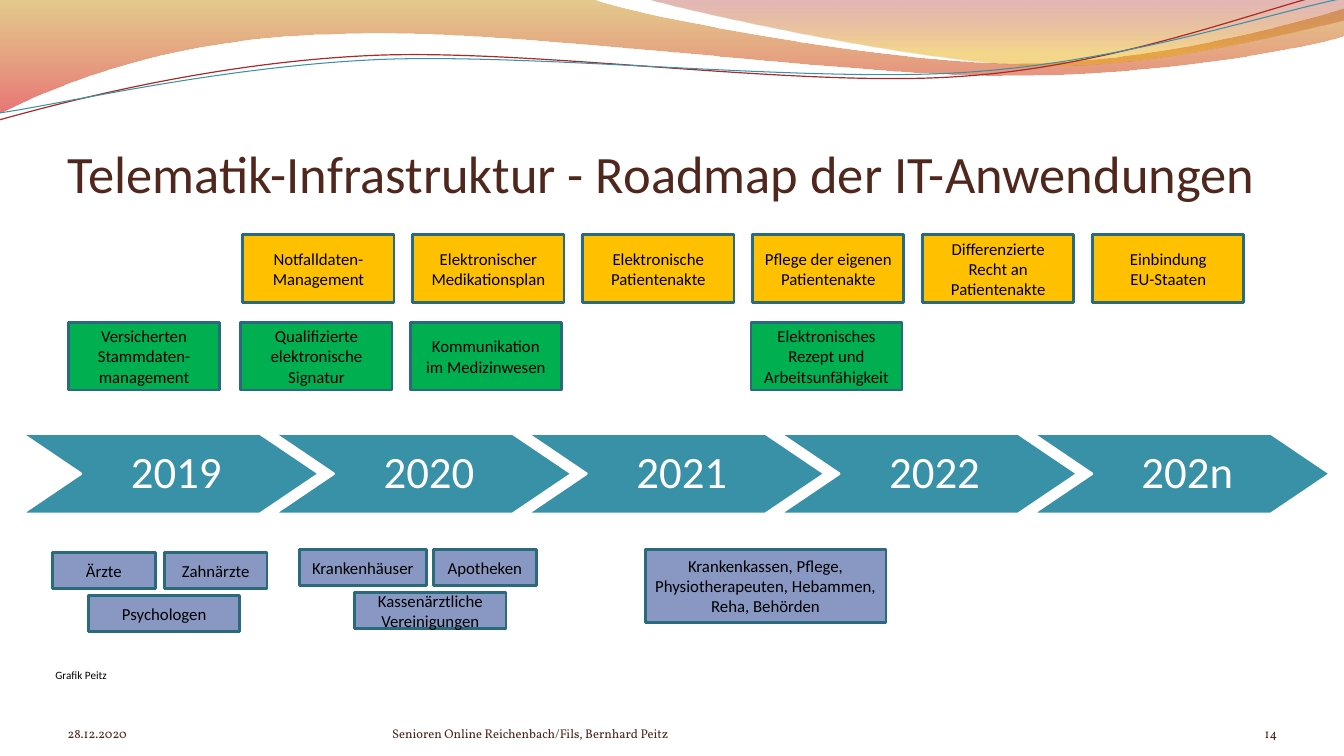
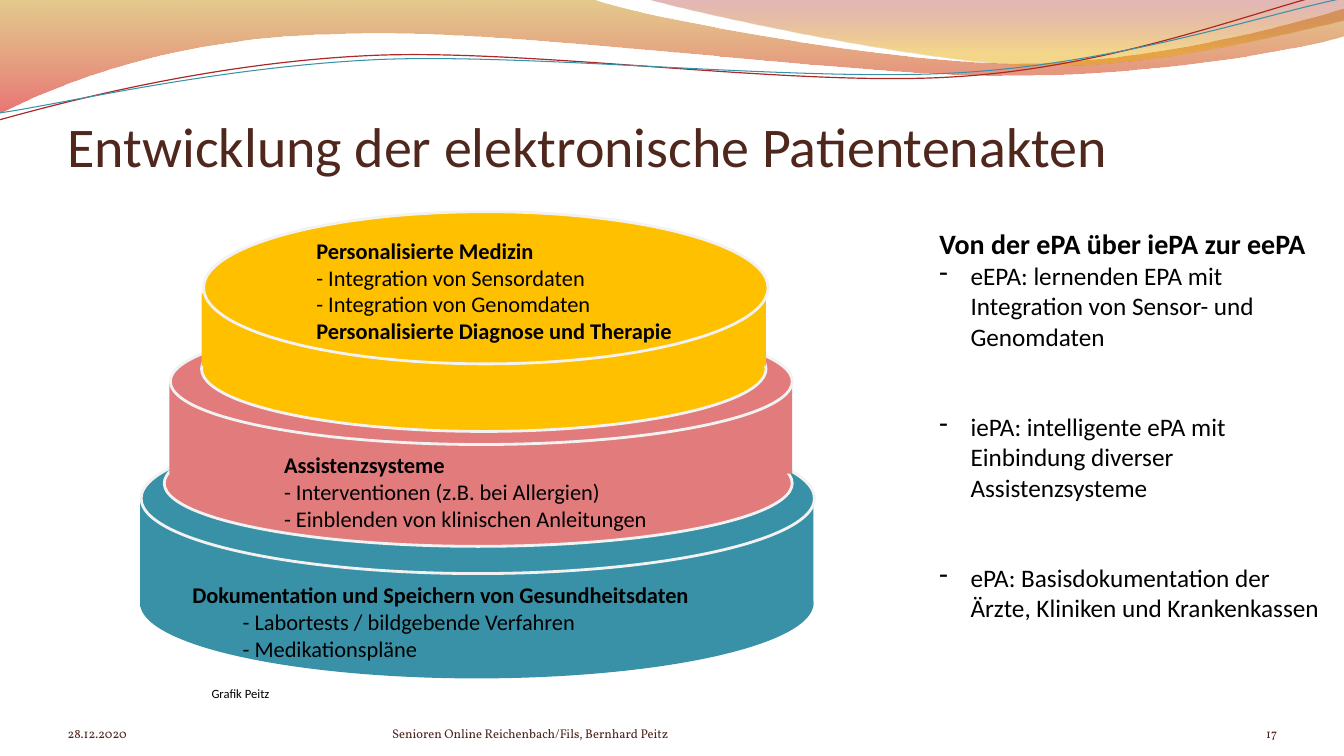
import pptx
import pptx.util
import pptx.dml.color
import pptx.enum.shapes
import pptx.enum.text
import pptx.oxml
import pptx.oxml.ns

COLORS = {
    "title": "4F271C", "footer": "4B251B", "text": "000000", "white": "FFFFFF",
    "teal": "3891A7", "border": "296B7C", "rim": "F2F2F2", "red_line": "AC2829",
    "green": "00B050", "amber": "FFC000", "lilac": "8898C3", "rose": "E17B7C",
    "ochre": "C38B00", "scarlet": "D60305", "wine": "A11112", "gold": "E9A600",
}
COLUMNS, ROWS = 40 / 3, 7.5
SHAPE = pptx.enum.shapes.MSO_SHAPE
ALIGN = pptx.enum.text.PP_ALIGN
ANCHOR = pptx.enum.text.MSO_ANCHOR
GROW = pptx.enum.text.MSO_AUTO_SIZE.SHAPE_TO_FIT_TEXT
NSDECLS = pptx.oxml.ns.nsdecls("a")

BODY = {"name": "Calibri", "size": 12, "color": "text"}
TITLE = {**BODY, "size": 40, "color": "title"}
FOOTER = {"name": "Vollkorn", "size": 9, "color": "footer"}
YEAR = {**BODY, "size": 32, "color": "white"}
TIER_TEXT = {**BODY, "size": 16}
BOLD = {"bold": True}

WAVES = [
    dict(start=(0, 0), close=True, stops=[(0, "ochre", 45), (1, "scarlet", 55)], path=[
        (5.87, -0.01), (6.34, 0.17, 8.85, 0.63, 10.11, 0.63),
        (11.38, 0.63, 12.78, 0.26, 13.33, 0.09), (13.35, 0.36),
        (13.11, 0.44, 11.6, 0.76, 9.94, 0.75), (8.29, 0.75, 5.09, 0.28, 3.43, 0.34),
        (1.72, 0.36, 0.61, 0.83, -0.01, 1.13), (0, 0)]),
    dict(start=(6.39, -0.01), close=True, stops=[(0, "wine", 30), (0.8, "gold", 45)], path=[
        (6.79, 0.11, 9.09, 0.62, 10.25, 0.65), (11.41, 0.69, 12.82, 0.32, 13.33, 0.21),
        (13.33, 0), (6.39, -0.01)]),
    dict(start=(-0.01, 1.19), line=("red_line", 0.85), path=[
        (0.64, 1.01, 2.11, 0.62, 3.69, 0.55), (5.27, 0.48, 7.9, 0.87, 9.5, 0.76),
        (11.1, 0.66, 12.52, 0.08, 13.31, -0.1)]),
    dict(start=(0, 1.12), line=("teal", 0.75), path=[
        (0.63, 1.03, 2.18, 0.66, 3.78, 0.59), (5.37, 0.53, 7.96, 0.82, 9.55, 0.72),
        (11.15, 0.62, 12.55, 0.14, 13.34, -0.02)]),
]


def grid(*cells):
    """Turn grid columns and rows into slide lengths."""
    return [pptx.util.Inches(c) for c in cells]


def rgb(name):
    """Look up a named colour."""
    return pptx.dml.color.RGBColor.from_string(COLORS[name])


def style(sp, fill=None, line=None):
    """Give a shape its fill and its (colour, points) line."""
    sp.shadow.inherit = False
    if fill:
        sp.fill.solid()
        sp.fill.fore_color.rgb = rgb(fill)
    if line:
        sp.line.color.rgb = rgb(line[0])
        sp.line.width = pptx.util.Pt(line[1])
    else:
        sp.line.fill.background()


def set_font(font, fmt):
    """Apply a dict of font values."""
    for key, value in fmt.items():
        if key == "color":
            font.color.rgb = rgb(value)
        else:
            setattr(font, key, pptx.util.Pt(value) if key == "size" else value)


def set_bullet(p, hang):
    """Give a paragraph a hanging dash in the font of its text."""
    pPr = p._p.get_or_add_pPr()
    pPr.set("marL", str(grid(hang)[0]))
    pPr.set("indent", str(-grid(hang)[0]))
    for tag in ("a:buFontTx", 'a:buChar char="-"'):
        name, _, attributes = tag.partition(" ")
        pPr.append(pptx.oxml.parse_xml("<%s %s %s/>" % (name, NSDECLS, attributes)))


def write(sp, paras, fmt, align=ALIGN.LEFT, anchor=ANCHOR.TOP,
          insets=(0.1, 0.05, 0.1, 0.05), wrap=True):
    """Fill a shape with (runs, bullet indent, space before) paragraphs."""
    tf = sp.text_frame
    tf.word_wrap = wrap
    if not wrap:
        tf.auto_size = GROW
    tf.vertical_anchor = anchor
    for side, inset in zip(("left", "top", "right", "bottom"), grid(*insets)):
        setattr(tf, "margin_" + side, inset)
    for i, (runs, hang, before) in enumerate(paras):
        p = tf.add_paragraph() if i else tf.paragraphs[0]
        p.alignment = align
        if before:
            p.space_before = pptx.util.Pt(before)
        if hang:
            set_bullet(p, hang)
        for text, changes in runs:
            for j, part in enumerate(text.split("\n")):
                if j:
                    p.add_line_break()
                if part:
                    r = p.add_run()
                    r.text = part
                    set_font(r.font, {**fmt, **changes})


def para(*runs, hang=0, before=0):
    """Describe one paragraph from texts or (text, font changes) runs."""
    return [(r, {}) if isinstance(r, str) else r for r in runs], hang, before


def add_text(s, box, paras, fmt, **frame):
    """Add a text box."""
    write(s.shapes.add_textbox(*grid(*box)), paras, fmt, **frame)


def add_shape(s, kind, box, fill, line=None):
    """Add a preset shape."""
    sp = s.shapes.add_shape(kind, *grid(*box))
    style(sp, fill, line)
    return sp


def bend(sp, path):
    """Turn the straight pieces that have control points into cubic curves."""
    pieces = list(sp.element.spPr.iter(pptx.oxml.ns.qn("a:lnTo")))
    for node, piece in zip(pieces, path):
        if len(piece) == 2:
            continue
        lengths = grid(*piece)
        points = "".join('<a:pt x="%d" y="%d"/>' % (x - sp.left, y - sp.top)
                         for x, y in zip(lengths[::2], lengths[1::2]))
        node.getparent().replace(node, pptx.oxml.parse_xml(
            "<a:cubicBezTo %s>%s</a:cubicBezTo>" % (NSDECLS, points)))


def add_wave(s, start, path, close=False, stops=(), line=None):
    """Draw one curved band or line of the header."""
    builder = s.shapes.build_freeform(*grid(*start))
    builder.add_line_segments([grid(*piece[-2:]) for piece in path], close=close)
    sp = builder.convert_to_shape()
    bend(sp, path)
    style(sp, line=line)
    if not stops:
        sp.fill.background()
        return
    sp.fill.gradient()
    sp.fill.gradient_angle = 270
    for stop, (position, color, _) in zip(sp.fill.gradient_stops, stops):
        stop.position = position
        stop.color.rgb = rgb(color)
    colors = list(sp.element.spPr.iter(pptx.oxml.ns.qn("a:srgbClr")))
    for node, (_, _, opacity) in zip(colors, stops):
        node.append(pptx.oxml.parse_xml(
            '<a:alpha %s val="%d"/>' % (NSDECLS, opacity * 1000)))


def add_slide(prs, title, title_height, title_size, number):
    """Add a slide with header waves, title and footer."""
    s = prs.slides.add_slide(prs.slide_layouts[6])
    for wave in WAVES:
        add_wave(s, **wave)
    add_text(s, (0.67, 0.77, 12, title_height), [para(title)], {**TITLE, "size": title_size},
             anchor=ANCHOR.BOTTOM, insets=(0, 0.05, 0, 0))
    for x, w, text, align in [
            (0.67, 3.11, "28.12.2020", ALIGN.LEFT),
            (3.89, 4.89, "Senioren Online Reichenbach/Fils, Bernhard Peitz", ALIGN.LEFT),
            (11.56, 1.11, number, ALIGN.RIGHT)]:
        add_text(s, (x, 6.95, w, 0.4), [para(text)], FOOTER, align=align,
                 anchor=ANCHOR.BOTTOM, insets=(0, 0, 0, 0))
    return s


def add_cards(s, x, y, fill, cards, w=1.5, h=0.67):
    """Place bordered cards at (column, row, text[, width, height]) from a corner."""
    for dx, dy, text, *size in cards:
        sp = add_shape(s, SHAPE.RECTANGLE, (x + dx, y + dy, *(size or (w, h))),
                       fill, ("border", 2))
        write(sp, [para(text)], BODY, align=ALIGN.CENTER, anchor=ANCHOR.MIDDLE)


def add_timeline(s, x, y, years, span=12.99, w=2.96, h=0.8):
    """Spread year chevrons evenly over a span."""
    pitch = (span - w) / (len(years) - 1)
    for i, year in enumerate(years):
        sp = add_shape(s, SHAPE.CHEVRON, (x + i * pitch, y, w, h), "teal", ("white", 2))
        sp.adjustments[0] = 0.74
        write(sp, [para(year)], YEAR, align=ALIGN.CENTER, anchor=ANCHOR.MIDDLE,
              insets=(0.19, 0.06, 0.07, 0.06))
        sp.text_frame.paragraphs[0].line_spacing = 0.9


def add_tier(s, x, y, fill, top, wall, base, base_line=True):
    """Stack base ellipse, wall and top ellipse into a disc."""
    rim = ("rim", 2)
    for kind, (dx, dy, w, h), line in [
            (SHAPE.OVAL, base, rim if base_line else None),
            (SHAPE.RECTANGLE, wall, None),
            (SHAPE.OVAL, top, rim)]:
        add_shape(s, kind, (x + dx, y + dy, w, h), fill, line)


def add_pyramid(s, x, y):
    """Place the three discs and their captions."""
    add_tier(s, x, y, "teal", (0.01, 2.1, 6.68, 1.49), (0, 2.84, 6.68, 1.08),
             (0, 3.14, 6.68, 1.49), base_line=False)
    add_tier(s, x, y, "rose", (0.3, 1.06, 6.17, 1.25), (0.29, 1.69, 6.18, 0.91),
             (0.24, 2.07, 6.23, 1.25))
    add_tier(s, x, y, "amber", (0.63, 0, 5.6, 1.51), (0.61, 0.81, 5.6, 0.72),
             (0.61, 0.94, 5.6, 1.24))
    for dx, dy, w, h, runs in [
            (0.42, 3.62, 5.2, 0.87, [
                ("Dokumentation und Speichern von Gesundheitsdaten\n", BOLD),
                "\t- Labortests / bildgebende Verfahren\n\t- Medikationspläne"]),
            (1.33, 2.33, 3.84, 0.87, [
                ("Assistenzsysteme\n", BOLD),
                "- Interventionen (z.B. bei Allergien)\n- Einblenden von klinischen Anleitungen"]),
            (1.65, 0.2, 3.77, 1.12, [
                ("Personalisierte Medizin\n", BOLD),
                "- Integration von Sensordaten\n- Integration von Genomdaten\n",
                ("Personalisierte Diagnose und Therapie", BOLD)])]:
        add_text(s, (x + dx, y + dy, w, h), [para(*runs)], TIER_TEXT, wrap=False)


def roadmap_slide(prs):
    """Build the roadmap of applications."""
    s = add_slide(prs, "Telematik-Infrastruktur - Roadmap der IT-Anwendungen", 1.25, 37.5, "14")
    add_cards(s, 0.68, 3.2, "green", [
        (0, 0, "Versicherten\nStammdaten-management"),
        (1.71, 0, "Qualifizierte\nelektronische\nSignatur"),
        (3.39, 0, "Kommunikation\nim Medizinwesen"),
        (6.77, 0, "Elektronisches\nRezept und Arbeitsunfähigkeit")])
    add_cards(s, 2.41, 2.33, "amber", [(8.43 / 5 * i, 0, text) for i, text in enumerate([
        "Notfalldaten-Management", "Elektronischer\nMedikationsplan",
        "Elektronische\nPatientenakte", "Pflege der eigenen Patientenakte",
        "Differenzierte Recht an Patientenakte", "Einbindung\nEU-Staaten"])])
    add_timeline(s, 0.21, 4.3, ["2019", "2020", "2021", "2022", "202n"])
    add_cards(s, 0.52, 5.48, "lilac", [
        (0, 0, "Ärzte", 1.02, 0.36), (1.11, 0, "Zahnärzte", 1.02, 0.36),
        (0.36, 0.43, "Psychologen", 1.5, 0.36)])
    add_cards(s, 2.97, 5.45, "lilac", [
        (0, 0, "Krankenhäuser", 1.26, 0.36), (1.33, 0, "Apotheken", 1.02, 0.36),
        (0.55, 0.43, "Kassenärztliche Vereinigungen", 1.5, 0.36)])
    add_cards(s, 6.4, 5.45, "lilac", [
        (0, 0, "Krankenkassen, Pflege, Physiotherapeuten, Hebammen, Reha, Behörden",
         2.39, 0.73)])
    add_text(s, (0.45, 6.58, 0.72, 0.24), [para("Grafik Peitz")], {**BODY, "size": 8}, wrap=False)


def records_slide(prs):
    """Build the development of the patient record."""
    s = add_slide(prs, "Entwicklung der elektronische Patientenakten", 1, 40, "17")
    add_text(s, (9.22, 1.9, 4.01, 4.38), [
        para(("Von der ePA über iePA zur eePA", {"size": 20, "bold": True})),
        para("eEPA: lernenden EPA mit\nIntegration von Sensor- und\nGenomdaten", hang=0.31),
        para("iePA: intelligente ePA mit\nEinbindung diverser\nAssistenzsysteme",
             hang=0.31, before=43),
        para("ePA: Basisdokumentation der\nÄrzte, Kliniken und Krankenkassen",
             hang=0.31, before=43)],
        {**BODY, "size": 18}, insets=(0.1, 0.35, 0.1, 0.05), wrap=False)
    add_pyramid(s, 1.39, 2.1)
    add_text(s, (2, 6.76, 0.82, 0.25), [para("Grafik Peitz")], {**BODY, "size": 9}, wrap=False)


def main():
    """Build and save the slides."""
    prs = pptx.Presentation()
    prs.slide_width, prs.slide_height = grid(COLUMNS, ROWS)
    roadmap_slide(prs)
    records_slide(prs)
    prs.save("out.pptx")


if __name__ == "__main__":
    main()
